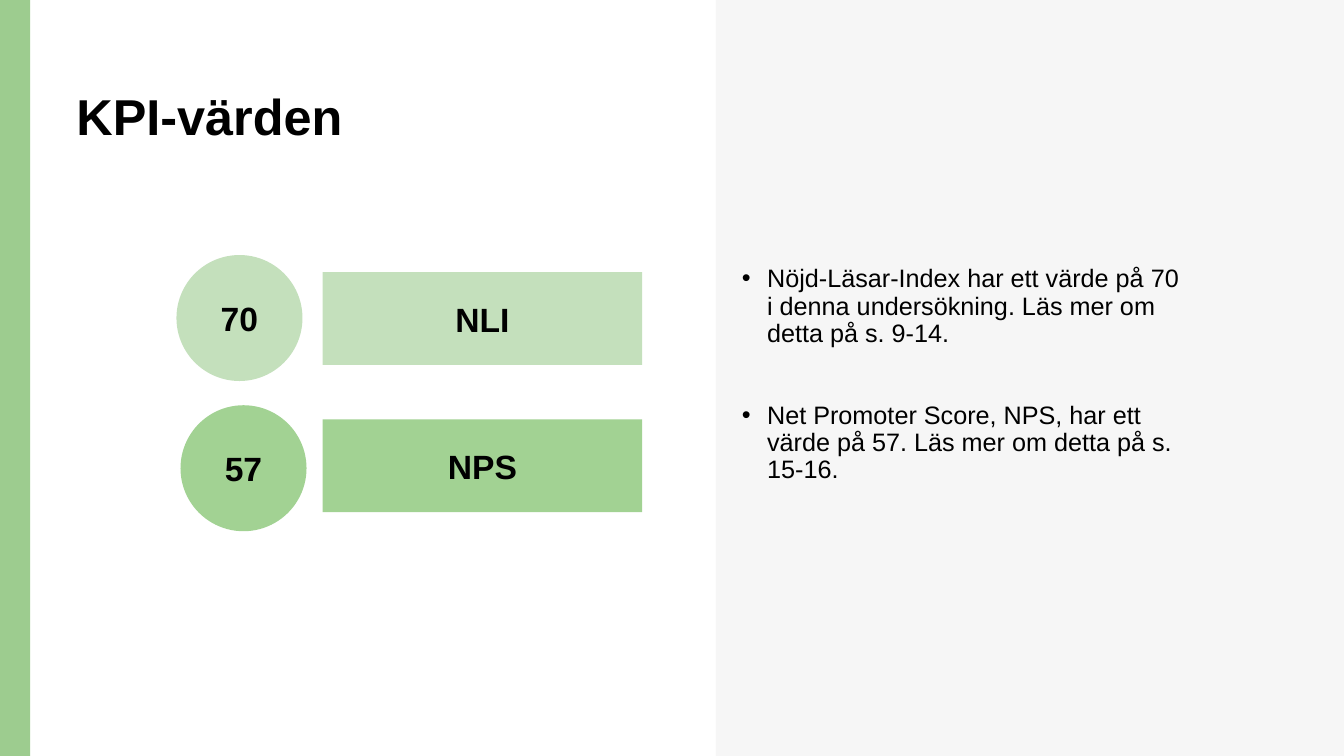
import pptx
import pptx.util
import pptx.dml.color
import pptx.enum.shapes
import pptx.enum.text
from lxml import etree

Inches = pptx.util.Inches
Pt = pptx.util.Pt
SHAPE = pptx.enum.shapes.MSO_SHAPE
ALIGN = pptx.enum.text.PP_ALIGN
ANCHOR = pptx.enum.text.MSO_ANCHOR

HEADING = "KPI-värden"
BANDS = [
    ((7.1, 0, 6.24, 7.5), "F6F6F6"),
    ((0, 0, 0.3, 7.5), "9DCC8F"),
]
KPIS = [
    {"value": "70", "label": "NLI", "color": "C4E0BC", "circle": (1.75, 2.53), "bar_top": 2.7},
    {"value": "57", "label": "NPS", "color": "A2D293", "circle": (1.79, 4.02), "bar_top": 4.16},
]
COMMENTS = [
    "Nöjd-Läsar-Index har ett värde på 70 i denna undersökning. Läs mer om detta på s. 9-14.",
    "Net Promoter Score, NPS, har ett värde på 57. Läs mer om detta på s. 15-16.",
]
CIRCLE_SIZE = 1.25
BAR_LEFT, BAR_WIDTH, BAR_HEIGHT = 3.2, 3.17, 0.92
COMMENT_GAP = 39


def rgb(color):
    return pptx.dml.color.RGBColor.from_string(color)


def style(paragraph, size, bold=False):
    for run in paragraph.runs:
        run.font.name = "Arial"
        run.font.size = Pt(size)
        run.font.bold = bold
        run.font.color.rgb = rgb("000000")


def add_block(slide, kind, box, color, text=""):
    block = slide.shapes.add_shape(kind, *map(Inches, box))
    block.shadow.inherit = False
    block.fill.solid()
    block.fill.fore_color.rgb = rgb(color)
    block.line.fill.background()
    if text:
        frame = block.text_frame
        frame.text = text
        frame.vertical_anchor = ANCHOR.MIDDLE
        frame.paragraphs[0].alignment = ALIGN.CENTER
        style(frame.paragraphs[0], 24, True)


def add_text(slide, box, anchor):
    frame = slide.shapes.add_textbox(*map(Inches, box)).text_frame
    frame.word_wrap = True
    frame.vertical_anchor = anchor
    return frame


def add_bullet(paragraph):
    properties = paragraph._p.get_or_add_pPr()
    properties.set("marL", str(Inches(0.25)))
    properties.set("indent", str(Inches(-0.25)))
    namespace = pptx.oxml.ns.qn("a:buFont")
    etree.SubElement(properties, namespace).set("typeface", "Arial")
    etree.SubElement(properties, pptx.oxml.ns.qn("a:buChar")).set("char", "•")


def main():
    deck = pptx.Presentation()
    deck.slide_width, deck.slide_height = Inches(13.33), Inches(7.5)
    slide = deck.slides.add_slide(deck.slide_layouts[6])

    for box, color in BANDS:
        add_block(slide, SHAPE.RECTANGLE, box, color)

    heading = add_text(slide, (0.66, 0.51, 11.95, 0.99), ANCHOR.BOTTOM)
    heading.text = HEADING
    heading.paragraphs[0].line_spacing = 0.9
    style(heading.paragraphs[0], 36, True)

    for kpi in KPIS:
        circle = (*kpi["circle"], CIRCLE_SIZE, CIRCLE_SIZE)
        bar = (BAR_LEFT, kpi["bar_top"], BAR_WIDTH, BAR_HEIGHT)
        add_block(slide, SHAPE.OVAL, circle, kpi["color"], kpi["value"])
        add_block(slide, SHAPE.RECTANGLE, bar, kpi["color"], kpi["label"])

    comments = add_text(slide, (7.26, 2.59, 4.55, 3.58), ANCHOR.TOP)
    comments.text = "\n".join(COMMENTS)
    for index, comment in enumerate(comments.paragraphs):
        add_bullet(comment)
        comment.line_spacing = 0.9
        if index:
            comment.space_before = Pt(COMMENT_GAP)
        style(comment, 18)

    deck.save("out.pptx")


if __name__ == "__main__":
    main()
